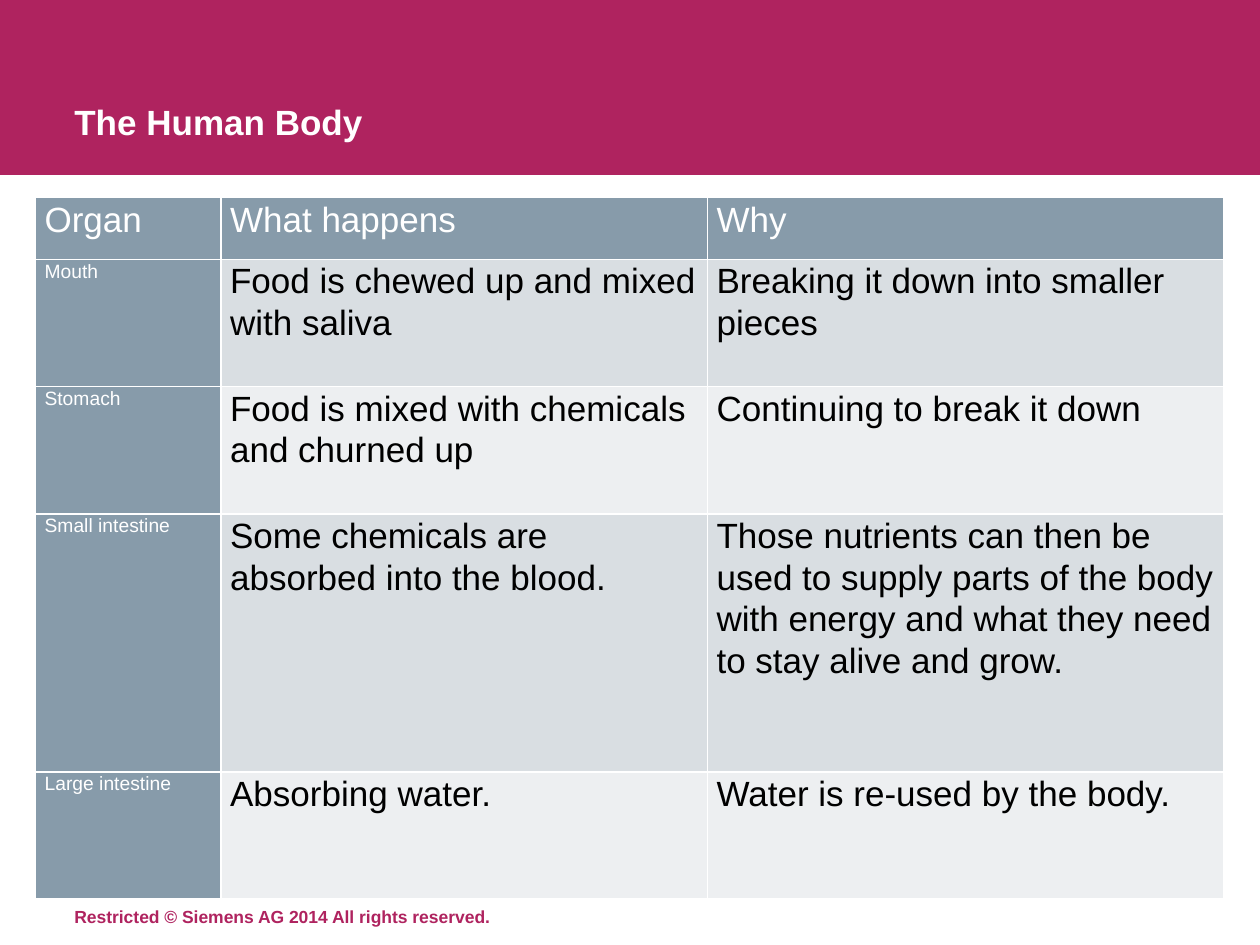
from lxml.etree import SubElement
from pptx import Presentation
from pptx.dml.color import RGBColor
from pptx.enum.shapes import MSO_SHAPE as Shape
from pptx.enum.text import MSO_ANCHOR as Anchor, MSO_AUTO_SIZE as AutoSize, PP_ALIGN as Align
from pptx.oxml.ns import qn
from pptx.util import Pt

BERRY = RGBColor(0xAF, 0x23, 0x5F)
SLATE = RGBColor(0x87, 0x9B, 0xAA)
MIST = RGBColor(0xD9, 0xDE, 0xE2)
PALE = RGBColor(0xED, 0xEF, 0xF1)
WHITE = RGBColor(0xFF, 0xFF, 0xFF)
BLACK = RGBColor(0, 0, 0)

COLUMN_WIDTHS = [106, 278, 295]
ROW_HEIGHTS = [35.3, 72.7, 72.7, 147.5, 72.7]
ORGANS = [
    ("Organ", "What happens", "Why"),
    ("Mouth", "Food is chewed up and mixed with saliva",
     "Breaking it down into smaller pieces"),
    ("Stomach", "Food is mixed with chemicals and churned up",
     "Continuing to break it down"),
    ("Small intestine", "Some chemicals are absorbed into the blood.",
     "Those nutrients can then be used to supply parts of the body "
     "with energy and what they need to stay alive and grow."),
    ("Large intestine", "Absorbing water.", "Water is re-used by the body."),
]


class SlideBuilder:
    font_name = "Arial"

    def __init__(self, slide):
        self.slide = slide

    def add_text(self, frame, text, size, color, bold=False):
        paragraph = frame.paragraphs[0]
        paragraph.alignment = Align.LEFT
        run = paragraph.add_run()
        run.text = text
        run.font.name = self.font_name
        run.font.size = Pt(size)
        run.font.bold = bold
        run.font.color.rgb = color
        return paragraph

    def set_frame(self, frame, anchor, left, top, right, bottom):
        frame.word_wrap = True
        frame.auto_size = AutoSize.NONE
        frame.vertical_anchor = anchor
        frame.margin_left, frame.margin_top = Pt(left), Pt(top)
        frame.margin_right, frame.margin_bottom = Pt(right), Pt(bottom)

    def title(self, text, width, height):
        title = self.slide.shapes.title
        title.left, title.top = Pt(0), Pt(0)
        title.width, title.height = Pt(width), Pt(height)
        self.set_frame(title.text_frame, Anchor.BOTTOM, 42.5, 31, 167, 18.7)
        self.add_text(title.text_frame, text, 20, WHITE, True)

    def band(self, width, height):
        band = self.slide.shapes.add_shape(Shape.RECTANGLE, Pt(0), Pt(0), Pt(width), Pt(height))
        band.shadow.inherit = False
        band.fill.solid()
        band.fill.fore_color.rgb = BERRY
        band.line.fill.background()
        self.slide.shapes.title.element.addprevious(band.element)

    def footer(self, text, top, width, height):
        footer = self.slide.shapes.add_textbox(Pt(0), Pt(top), Pt(width), Pt(height))
        self.set_frame(footer.text_frame, Anchor.MIDDLE, 42.5, 11.5, 167, 0)
        self.add_text(footer.text_frame, text, 10, BERRY, True)

    def borders(self, cell):
        properties = cell._tc.get_or_add_tcPr()
        for position, side in enumerate(("a:lnL", "a:lnR", "a:lnT", "a:lnB")):
            line = SubElement(properties, qn(side), w=str(Pt(1)))
            fill = SubElement(line, qn("a:solidFill"))
            SubElement(fill, qn("a:srgbClr"), val=str(WHITE))
            properties.insert(position, line)

    def cell(self, cell, text, size, color, fill):
        cell.margin_left = cell.margin_right = Pt(5.2)
        cell.margin_top = cell.margin_bottom = Pt(0)
        cell.vertical_anchor = Anchor.TOP
        cell.fill.solid()
        cell.fill.fore_color.rgb = fill
        self.borders(cell)
        self.add_text(cell.text_frame, text, size, color).line_spacing = 1.07

    def table(self, rows, left, top, widths, heights):
        frame = self.slide.shapes.add_table(len(rows), len(widths), Pt(left), Pt(top),
                                            Pt(sum(widths)), Pt(sum(heights)))
        table = frame.table
        for column, width in zip(table.columns, widths):
            column.width = Pt(width)
        for row, height in zip(table.rows, heights):
            row.height = Pt(height)
        for i, texts in enumerate(rows):
            for j, text in enumerate(texts):
                heading = i == 0 or j == 0
                size = 11 if i > 0 and j == 0 else 20
                fill = SLATE if heading else (MIST if i % 2 else PALE)
                self.cell(table.cell(i, j), text, size, WHITE if heading else BLACK, fill)


def main():
    presentation = Presentation()
    presentation.slide_width, presentation.slide_height = Pt(720), Pt(540)
    slide = presentation.slides.add_slide(presentation.slide_layouts[5])
    builder = SlideBuilder(slide)
    builder.band(720, 100)
    builder.footer("Restricted © Siemens AG 2014 All rights reserved.", 501, 720, 34)
    builder.title("The Human Body", 699, 100)
    builder.table(ORGANS, 20.3, 113, COLUMN_WIDTHS, ROW_HEIGHTS)
    presentation.save("out.pptx")


if __name__ == "__main__":
    main()
